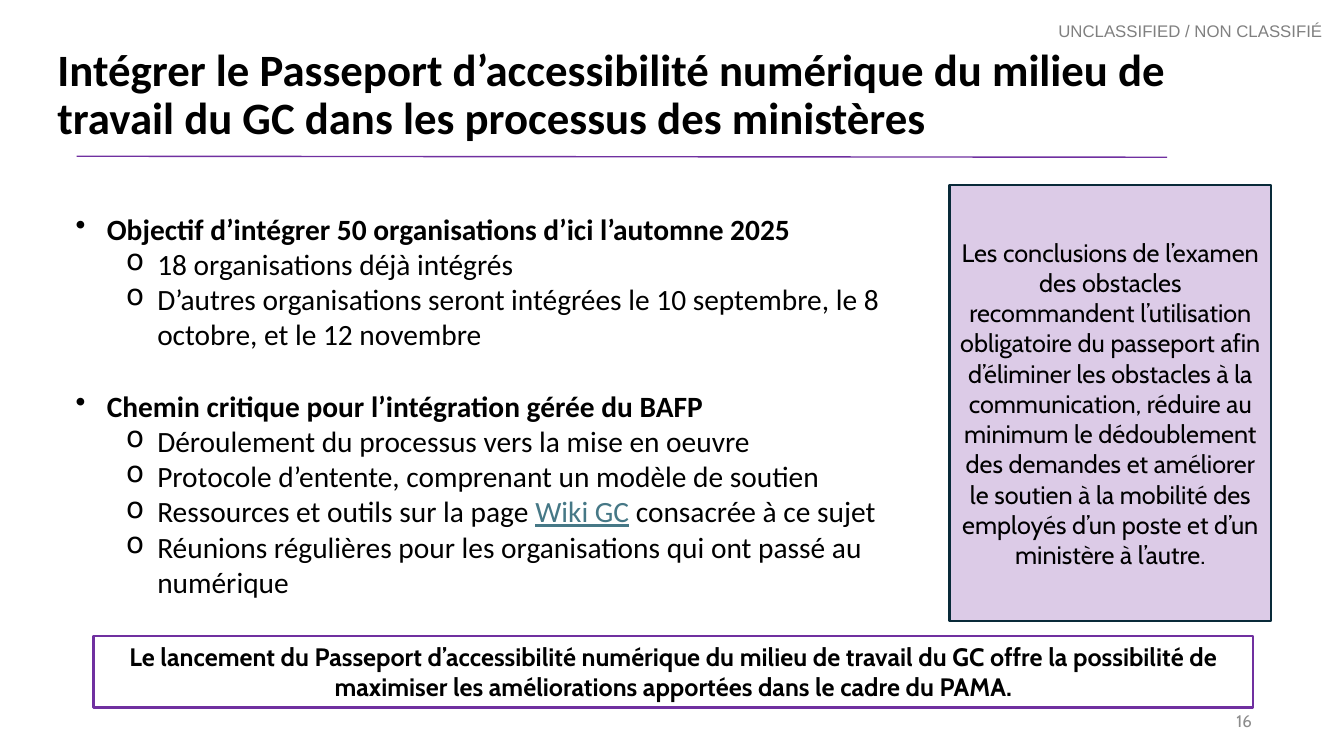
import pptx
import pptx.util
import pptx.dml.color
import pptx.enum.shapes
import pptx.enum.text
import pptx.oxml.ns
import lxml.etree

RGB = pptx.dml.color.RGBColor
BLACK = RGB(0x00, 0x00, 0x00)
GREY = RGB(0x80, 0x80, 0x80)
PALE = RGB(0x8C, 0x8C, 0x8C)
LILAC = RGB(0xDC, 0xCB, 0xE7)
NAVY = RGB(0x09, 0x2A, 0x39)
PURPLE = RGB(0x70, 0x30, 0xA0)
TEAL = RGB(0x46, 0x78, 0x86)

ALIGN = pptx.enum.text.PP_ALIGN
MIDDLE = pptx.enum.text.MSO_ANCHOR.MIDDLE
POINTS = [
    ("Objectif d’intégrer 50 organisations d’ici l’automne 2025", [
        ["18 organisations déjà intégrés"],
        ["D’autres organisations seront intégrées le 10 septembre, le 8 octobre, et le 12 novembre"],
    ]),
    ("Chemin critique pour l’intégration gérée du BAFP", [
        ["Déroulement du processus vers la mise en oeuvre"],
        ["Protocole d’entente, comprenant un modèle de soutien"],
        ["Ressources et outils sur la page ", "Wiki GC", " consacrée à ce sujet"],
        ["Réunions régulières pour les organisations qui ont passé au numérique"],
    ]),
]


def write(par, text, size=18, font="Cabin", color=BLACK, bold=False, under=False):
    run = par.add_run()
    run.text = text
    run.font.size = pptx.util.Pt(size)
    run.font.name = font
    run.font.color.rgb = color
    run.font.bold = bold
    run.font.underline = under


class Deck:
    """Draws styled elements on one slide, with lengths in percent of its size."""

    def __init__(self):
        self.file = pptx.Presentation()
        self.file.slide_width = pptx.util.Inches(13.33)
        self.file.slide_height = pptx.util.Inches(7.5)
        self.slide = self.file.slides.add_slide(self.file.slide_layouts[6])

    def scale(self, *sides):
        full = (self.file.slide_width, self.file.slide_height)
        return [round(side * full[i % 2] / 100) for i, side in enumerate(sides)]

    def text(self, place, text="", align=ALIGN.LEFT, wrap=True, right=0, **fmt):
        frame = self.slide.shapes.add_textbox(*self.scale(*place)).text_frame
        frame.word_wrap = wrap
        frame.margin_left = frame.margin_top = frame.margin_bottom = 0
        frame.margin_right = self.scale(right)[0]
        par = frame.paragraphs[0]
        par.alignment = align
        if text:
            write(par, text, **fmt)
        return frame

    def panel(self, place, text, line, width, fill=None, **fmt):
        kind = pptx.enum.shapes.MSO_SHAPE.RECTANGLE
        shape = self.slide.shapes.add_shape(kind, *self.scale(*place))
        shape.shadow.inherit = False
        if fill is None:
            shape.fill.background()
        else:
            shape.fill.solid()
            shape.fill.fore_color.rgb = fill
        shape.line.color.rgb = line
        shape.line.width = pptx.util.Pt(width)
        frame = shape.text_frame
        frame.word_wrap = True
        frame.vertical_anchor = MIDDLE
        par = frame.paragraphs[0]
        par.alignment = ALIGN.CENTER
        write(par, text, **fmt)

    def rule(self, start, end, color, width):
        kind = pptx.enum.shapes.MSO_CONNECTOR.STRAIGHT
        line = self.slide.shapes.add_connector(kind, *self.scale(*start, *end))
        line.line.color.rgb = color
        line.line.width = pptx.util.Pt(width)
        props = line._element.spPr
        lxml.etree.SubElement(props, pptx.oxml.ns.qn("a:effectLst"))

    def bullet(self, par, mark, indent, level=0):
        par.level = level
        props = par._p.get_or_add_pPr()
        props.set("marL", str(pptx.util.Inches(indent)))
        props.set("indent", str(-pptx.util.Inches(0.31)))
        sign = lxml.etree.SubElement(props, pptx.oxml.ns.qn("a:buChar"))
        sign.set("char", mark)

    def points(self, place, groups, gap, **fmt):
        frame = self.text(place)
        par = frame.paragraphs[0]
        for i, (head, items) in enumerate(groups):
            if i:
                par = frame.add_paragraph()
                par.space_before = pptx.util.Pt(gap)
            self.bullet(par, "•", 0.31)
            write(par, head, bold=True, **fmt)
            for item in items:
                par = frame.add_paragraph()
                self.bullet(par, "o", 0.81, 1)
                for j, part in enumerate(item):
                    link = j == 1
                    write(par, part, color=TEAL if link else BLACK, under=link, **fmt)


def main():
    deck = Deck()
    deck.text((78.75, 2.8, 20, 2.67), "UNCLASSIFIED / NON CLASSIFIÉ",
              wrap=False, size=12, font="Arial", color=GREY)
    page = deck.text((70.65, 92.67, 22.5, 5.33), "16", align=ALIGN.RIGHT, size=12, color=PALE)
    page.vertical_anchor = MIDDLE
    title = deck.text((4.28, 6.27, 91.28, 12.93),
                      "Intégrer le Passeport d’accessibilité numérique du milieu de travail "
                      "du GC dans les processus des ministères",
                      right=5, size=32, font="Calibri", bold=True)
    title.paragraphs[0].line_spacing = 0.9
    deck.points((5.63, 27.87, 61.13, 51.87), POINTS, 25.6, size=21, font="Calibri")
    deck.panel((70.65, 24.53, 23.93, 57.6),
               "Les conclusions de l’examen des obstacles recommandent l’utilisation "
               "obligatoire du passeport afin d’éliminer les obstacles à la communication, "
               "réduire au minimum le dédoublement des demandes et améliorer le soutien à la "
               "mobilité des employés d’un poste et d’un ministère à l’autre.",
               NAVY, 1.5, fill=LILAC)
    deck.panel((6.98, 84.13, 86.25, 9.47),
               "Le lancement du Passeport d’accessibilité numérique du milieu de travail du GC "
               "offre la possibilité de maximiser les améliorations apportées dans le cadre du PAMA.",
               PURPLE, 2, bold=True)
    deck.rule((5.7, 20.67), (86.85, 20.8), PURPLE, 1)
    deck.file.save("out.pptx")


if __name__ == "__main__":
    main()
